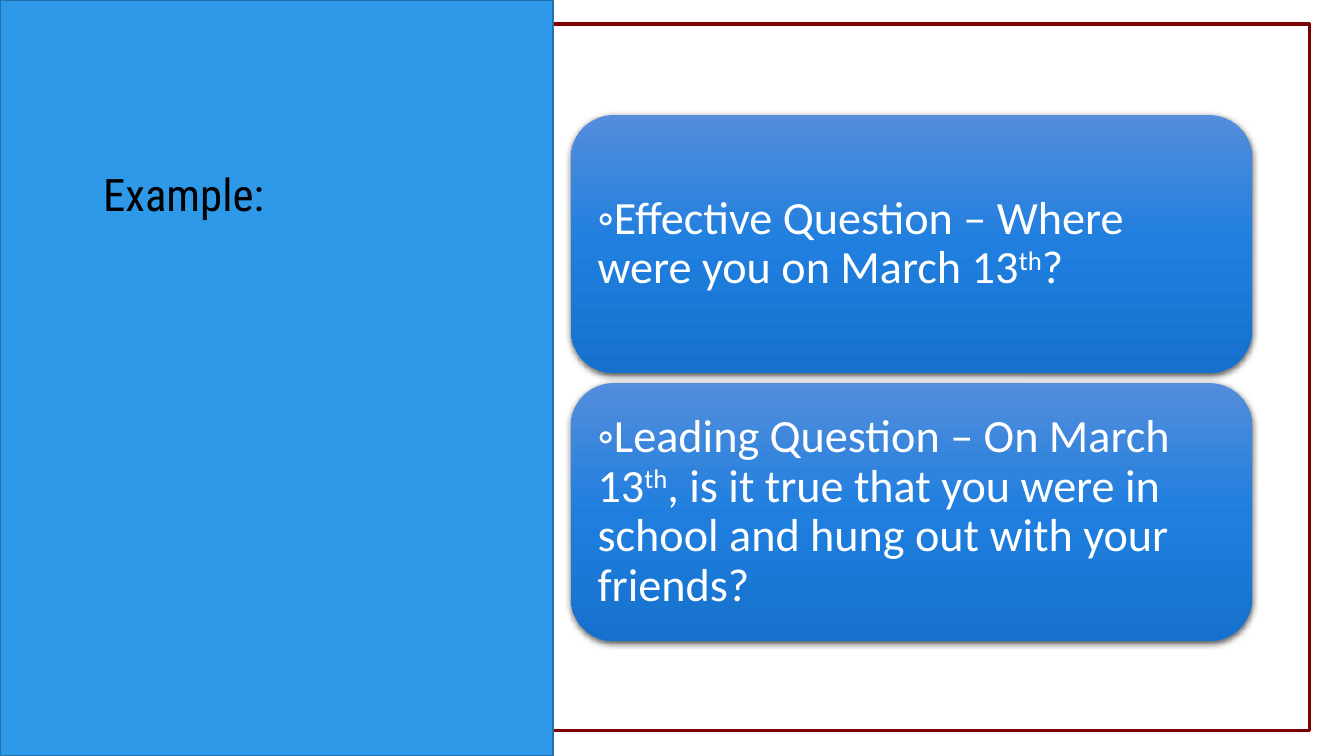
from copy import deepcopy

from lxml import etree
from pptx import Presentation
from pptx import util as u
from pptx.dml.color import RGBColor
from pptx.enum import shapes, text
from pptx.oxml import ns

PX = 9071  # EMU per px, 100.8 px to the inch
FRAME_RED = RGBColor(0x7E, 0x00, 0x00)
PANEL_BLUE = RGBColor(0x2E, 0x99, 0xE9)
PANEL_EDGE = RGBColor(0x22, 0x71, 0xAC)
CARD_BLUES = (RGBColor(0x53, 0x8D, 0xDC), RGBColor(0x20, 0x7F, 0xDE),
              RGBColor(0x15, 0x71, 0xCD))
BLACK = RGBColor(0, 0, 0)
WHITE = RGBColor(255, 255, 255)

# Text pieces of each card: before, superscript, after
QUESTIONS = [
    ("◦Effective Question – Where were you on March 13", "th", "?"),
    ("◦Leading Question – On March 13", "th",
     ", is it true that you were in school and hung out with your friends?"),
]


def px(*lengths):
    return [u.Emu(n * PX) for n in lengths]


def add_box(s, kind, box, fill=None, line=None, width=1):
    sp = s.shapes.add_shape(kind, *px(*box))
    sp.shadow.inherit = False
    if fill is None:
        sp.fill.background()
    else:
        sp.fill.solid()
        sp.fill.fore_color.rgb = fill
    if line is None:
        sp.line.fill.background()
    else:
        sp.line.color.rgb = line
        sp.line.width = u.Pt(width)
    return sp


def style_run(r, font, size, color):
    r.font.name = font
    r.font.size = u.Pt(size)
    r.font.color.rgb = color


def fill_gradient(sp, colors):
    """Spread the colours evenly from top to bottom."""
    sp.fill.gradient()
    sp.fill.gradient_angle = 270
    stops = sp._element.spPr.find(".//" + ns.qn("a:gsLst"))
    stops.insert(1, deepcopy(stops[0]))
    for i, (stop, color) in enumerate(zip(sp.fill.gradient_stops, colors)):
        stop.color.rgb = color
        stop.position = i / (len(colors) - 1)


def add_shadow(sp):
    effects = sp._element.spPr.find(ns.qn("a:effectLst"))
    shadow = etree.SubElement(
        effects, ns.qn("a:outerShdw"), blurRad=str(u.Pt(4.5)),
        dist=str(u.Pt(1.5)), dir="5400000", algn="ctr", rotWithShape="0")
    color = etree.SubElement(shadow, ns.qn("a:srgbClr"), val=str(BLACK))
    etree.SubElement(color, ns.qn("a:alpha"), val="63000")


def add_title_panel(s, box):
    left, top, width, height = box
    add_box(s, shapes.MSO_SHAPE.RECTANGLE, box, PANEL_BLUE, PANEL_EDGE)
    title = s.shapes.title
    title.left, title.top, title.width, title.height = px(
        left + 93, top + 50, width - 130, 176)
    s.shapes._spTree.append(title._element)  # bring in front of the panel
    tf = title.text_frame
    tf.text = "Example:"
    tf.word_wrap = True
    tf.vertical_anchor = text.MSO_ANCHOR.BOTTOM
    p = tf.paragraphs[0]
    p.alignment = text.PP_ALIGN.LEFT
    p.line_spacing = 0.9
    style_run(p.runs[0], "Roboto Condensed", 32, BLACK)


def add_card(s, box, pieces):
    sp = add_box(s, shapes.MSO_SHAPE.ROUNDED_RECTANGLE, box)
    fill_gradient(sp, CARD_BLUES)
    add_shadow(sp)
    tf = sp.text_frame
    tf.word_wrap = True
    tf.vertical_anchor = text.MSO_ANCHOR.MIDDLE
    tf.margin_left, tf.margin_top, tf.margin_right, tf.margin_bottom = px(
        14, 14, 14, 14)
    p = tf.paragraphs[0]
    p.alignment = text.PP_ALIGN.LEFT
    p.line_spacing = 0.9
    for i, piece in enumerate(pieces):
        r = p.add_run()
        r.text = piece
        style_run(r, "Calibri", 33, WHITE)
        if i == 1:
            r.font._element.set("baseline", "30000")


def add_cards(s, box, questions, gap=10):
    left, top, width, height = box
    card_height = (height - gap * (len(questions) - 1)) // len(questions)
    for i, pieces in enumerate(questions):
        y = top + i * (card_height + gap)
        add_card(s, (left, y, width, card_height), pieces)


def main():
    prs = Presentation()
    prs.slide_width, prs.slide_height = px(1344, 756)
    s = prs.slides.add_slide(prs.slide_layouts[5])

    # Frame behind everything
    add_box(s, shapes.MSO_SHAPE.RECTANGLE, (22, 24, 1288, 707),
            line=FRAME_RED, width=2.25)
    # Left panel with the title, question cards on the right
    add_title_panel(s, (0, 0, 553, 756))
    add_cards(s, (571, 115, 681, 526), QUESTIONS)

    prs.save("out.pptx")


if __name__ == "__main__":
    main()
